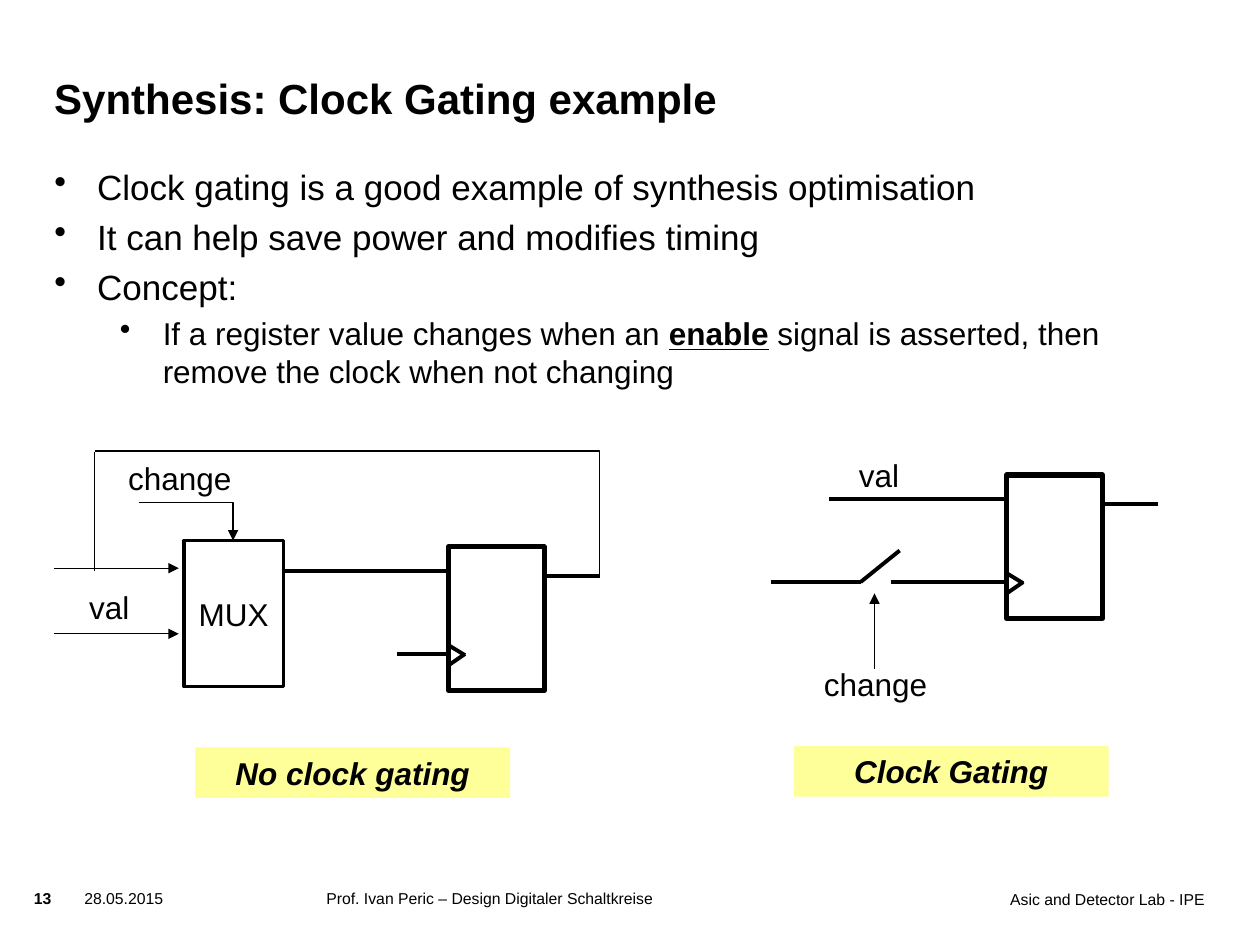
from dataclasses import dataclass

from lxml.etree import SubElement
from pptx import Presentation
from pptx.dml.color import RGBColor
from pptx.enum.shapes import MSO_CONNECTOR, MSO_SHAPE
from pptx.enum.text import MSO_ANCHOR, MSO_AUTO_SIZE, PP_ALIGN
from pptx.oxml.ns import qn
from pptx.shapes.autoshape import Shape
from pptx.shapes.connector import Connector
from pptx.slide import Slide
from pptx.text.text import Font, TextFrame
from pptx.util import Pt


@dataclass(frozen=True)
class Theme:
    font: str = "Arial"
    ink: RGBColor = RGBColor(0, 0, 0)
    paper: RGBColor = RGBColor(255, 255, 255)
    highlight: RGBColor = RGBColor(255, 255, 153)
    title: float = 24
    body: float = 20
    label: float = 18
    footer: float = 9
    thin: float = 0.75
    wire: float = 2.25
    mux: float = 2
    register: float = 3


THEME = Theme()


@dataclass(frozen=True)
class Text:
    words: str
    left: float
    top: float
    width: float
    height: float
    size: float = THEME.label
    bold: bool = False
    align: PP_ALIGN = PP_ALIGN.LEFT
    anchor: MSO_ANCHOR = MSO_ANCHOR.TOP
    inset: bool = False


@dataclass(frozen=True)
class Wire:
    start: tuple[float, float]
    end: tuple[float, float]
    weight: float = THEME.wire
    arrow: bool = False
    bent: bool = False


@dataclass(frozen=True)
class Bullet:
    runs: tuple[str, ...]
    level: int = 0
    size: float = THEME.body
    indent: float = 24.5


TEXTS = (
    Text("Asic and Detector Lab - IPE", 473, 508.3, 215.3, 28, THEME.footer, align=PP_ALIGN.RIGHT),
    Text("13", 19.4, 507.6, 26, 17, THEME.footer, True),
    Text("28.05.2015", 48.2, 507.6, 67.7, 28, THEME.footer),
    Text("Prof. Ivan Peric – Design Digitaler Schaltkreise", 186.5, 507.6, 215.3, 28, THEME.footer),
    Text("Synthesis: Clock Gating example", 31, 26, 544.3, 44, THEME.title, True,
         anchor=MSO_ANCHOR.BOTTOM),
    Text("change", 66.2, 258.5, 90.7, 29, inset=True),
    Text("val", 43.9, 332.6, 90.7, 29, inset=True),
    Text("val", 483.8, 257, 90.7, 29, inset=True),
    Text("change", 463.7, 376.6, 90.7, 29, inset=True),
)

BULLETS = (
    Bullet(("Clock gating is a good example of synthesis optimisation",)),
    Bullet(("It can help save power and modifies timing",)),
    Bullet(("Concept:",)),
    Bullet(("If a register value changes when an ", "enable",
            " signal is asserted, then remove the clock when not changing"), 1, THEME.label, 62),
)

REGISTERS = ((256.3, 312.5), (575.3, 271.4))

REGISTER_WIRES = (
    Wire((-31, 13.7), (0, 13.7)),
    Wire((-29.5, 61.2), (1, 61.2)),
    Wire((55.4, 16.6), (86.4, 16.6)),
    Wire((0, 56.2), (9.4, 61.9)),
    Wire((0, 67.7), (9.4, 61.2)),
)

WIRES = (
    Wire((31, 324.7), (102.2, 324.7), THEME.thin, True),
    Wire((31, 362.2), (102.2, 362.2), THEME.thin, True),
    Wire((79.2, 287.3), (133.2, 308.9), THEME.thin, True, True),
    Wire((54, 257.8), (342.7, 329), THEME.thin, bent=True),
    Wire((54, 258.5), (54, 326.2), THEME.thin),
    Wire((161.3, 326.2), (225.4, 326.2)),
    Wire((440.6, 332.6), (491.8, 332.6)),
    Wire((491.8, 332.6), (514.1, 314.6)),
    Wire((509, 332.6), (546.5, 332.6)),
    Wire((473.8, 285.1), (545, 285.1)),
    Wire((499.7, 382.3), (499.7, 339.1), THEME.thin, True),
)

CAPTIONS = (("No clock gating", 111.6, 427), ("Clock Gating", 453.6, 426.2))


def style_font(font: Font, size: float, bold: bool = False) -> None:
    font.name, font.size, font.bold = THEME.font, Pt(size), bold
    font.color.rgb = THEME.ink


def remove_margins(frame: TextFrame) -> None:
    frame.margin_left = frame.margin_right = frame.margin_top = frame.margin_bottom = 0


def add_text(slide: Slide, text: Text) -> None:
    box = slide.shapes.add_textbox(Pt(text.left), Pt(text.top), Pt(text.width), Pt(text.height))
    frame = box.text_frame
    frame.word_wrap = True
    frame.vertical_anchor = text.anchor
    if text.inset:
        frame.auto_size = MSO_AUTO_SIZE.SHAPE_TO_FIT_TEXT
    else:
        remove_margins(frame)
    frame.text = text.words
    paragraph = frame.paragraphs[0]
    paragraph.alignment = text.align
    style_font(paragraph.runs[0].font, text.size, text.bold)


def add_body(slide: Slide) -> None:
    frame = slide.shapes.add_textbox(Pt(31), Pt(94.3), Pt(658), Pt(385.2)).text_frame
    frame.word_wrap = True
    remove_margins(frame)
    for index, bullet in enumerate(BULLETS):
        paragraph = frame.add_paragraph() if index else frame.paragraphs[0]
        paragraph.level = bullet.level
        if index:
            paragraph.space_before = Pt(bullet.size * 0.23)
        properties = paragraph._p.get_or_add_pPr()
        properties.set("marL", str(Pt(bullet.indent)))
        properties.set("indent", str(Pt(-24.5)))
        SubElement(properties, qn("a:buChar")).set("char", "•")
        for words in bullet.runs:
            run = paragraph.add_run()
            run.text = words
            emphasised = words == "enable"
            style_font(run.font, bullet.size, emphasised)
            run.font.underline = emphasised


def add_wire(shapes, wire: Wire, left: float = 0, top: float = 0) -> Connector:
    kind = MSO_CONNECTOR.ELBOW if wire.bent else MSO_CONNECTOR.STRAIGHT
    (x1, y1), (x2, y2) = wire.start, wire.end
    connector = shapes.add_connector(kind, Pt(left + x1), Pt(top + y1), Pt(left + x2), Pt(top + y2))
    connector.line.color.rgb = THEME.ink
    connector.line.width = Pt(wire.weight)
    properties = connector._element.spPr
    if wire.bent:
        properties.find(qn("a:prstGeom")).set("prst", "bentConnector2")
    if wire.arrow:
        SubElement(properties.find(qn("a:ln")), qn("a:tailEnd")).set("type", "triangle")
    SubElement(properties, qn("a:effectLst"))
    return connector


def add_box(shapes, left: float, top: float, width: float, height: float) -> Shape:
    shape = shapes.add_shape(MSO_SHAPE.RECTANGLE, Pt(left), Pt(top), Pt(width), Pt(height))
    shape.shadow.inherit = False
    shape.fill.background()
    shape.line.color.rgb = THEME.ink
    return shape


def add_register(slide: Slide, left: float, top: float) -> None:
    group = slide.shapes.add_group_shape()
    add_box(group.shapes, left, top, 54.7, 82).line.width = Pt(THEME.register)
    for wire in REGISTER_WIRES:
        add_wire(group.shapes, wire, left, top)


def fill_box(shape: Shape, words: str, color: RGBColor, strong: bool = False) -> None:
    shape.fill.solid()
    shape.fill.fore_color.rgb = color
    shape.text_frame.text = words
    paragraph = shape.text_frame.paragraphs[0]
    paragraph.alignment = PP_ALIGN.CENTER
    style_font(paragraph.runs[0].font, THEME.label, strong)
    paragraph.runs[0].font.italic = strong


def main() -> None:
    presentation = Presentation()
    presentation.slide_width, presentation.slide_height = Pt(720), Pt(540)
    slide = presentation.slides.add_slide(presentation.slide_layouts[6])
    add_body(slide)
    for left, top in REGISTERS:
        add_register(slide, left, top)
    mux = add_box(slide.shapes, 105.1, 308.9, 56.9, 83.5)
    mux.line.width = Pt(THEME.mux)
    fill_box(mux, "MUX", THEME.paper)
    for wire in WIRES:
        add_wire(slide.shapes, wire)
    for text in TEXTS:
        add_text(slide, text)
    for words, left, top in CAPTIONS:
        caption = add_box(slide.shapes, left, top, 180, 29)
        caption.line.fill.background()
        fill_box(caption, words, THEME.highlight, True)
    presentation.save("out.pptx")


if __name__ == "__main__":
    main()
